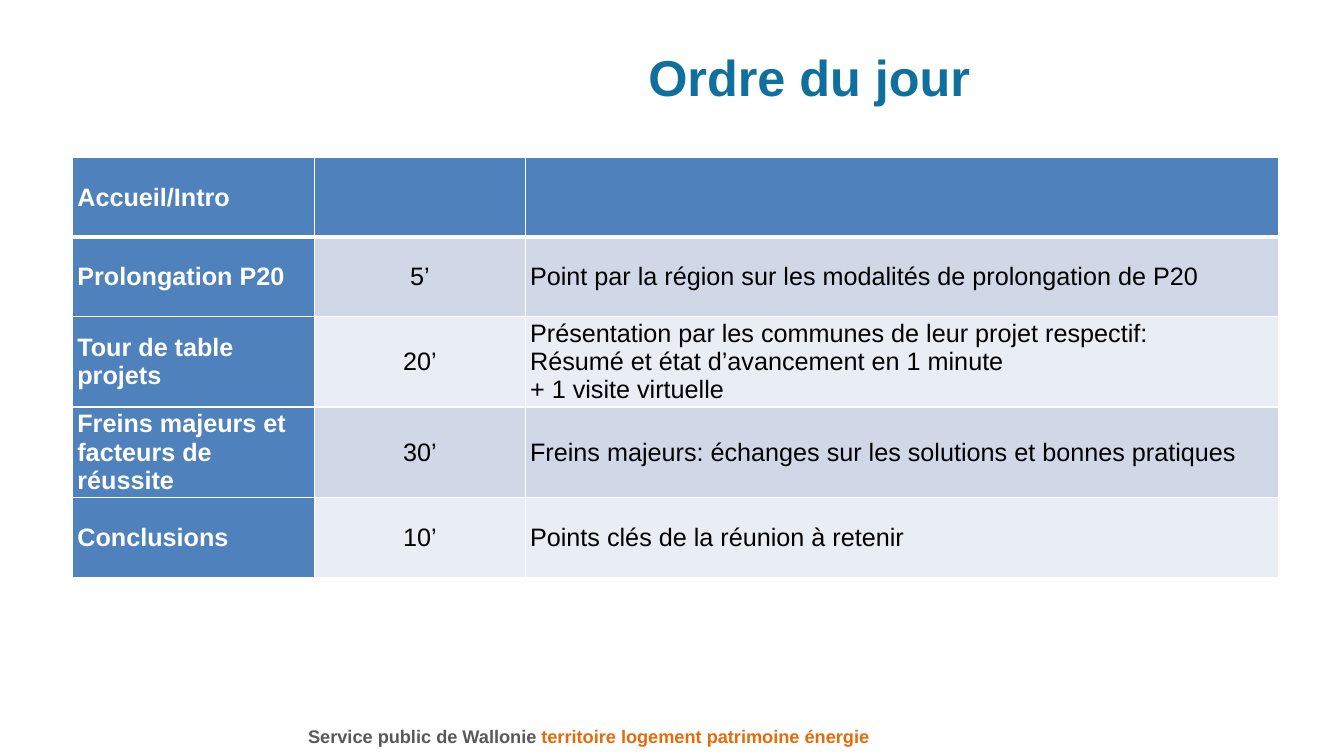
"""Builds the agenda slide of the meeting."""
from dataclasses import dataclass

from lxml.etree import SubElement
from pptx import Presentation
from pptx.dml.color import RGBColor
from pptx.enum.text import MSO_ANCHOR as Anchor, PP_ALIGN as Align
from pptx.oxml.ns import qn
from pptx.util import Cm, Pt


@dataclass(frozen=True)
class Theme:
    """Colours and type sizes of the slide."""
    font: str = "Arial"
    title: str = "0F709E"
    label: str = "FFFFFF"
    body: str = "000000"
    border: str = "FFFFFF"
    header: str = "4F81BD"
    bands: tuple = ("D0D8E8", "E9EDF4")
    service: str = "595959"
    department: str = "E46C0A"
    title_size: int = 36
    table_size: int = 18
    footer_size: int = 13


AGENDA = [
    ("Accueil/Intro", "", ""),
    ("Prolongation P20", "5’", "Point par la région sur les modalités de prolongation de P20"),
    ("Tour de table projets", "20’",
     "Présentation par les communes de leur projet respectif:\n"
     "Résumé et état d’avancement en 1 minute\n+ 1 visite virtuelle"),
    ("Freins majeurs et facteurs de réussite", "30’",
     "Freins majeurs: échanges sur les solutions et bonnes pratiques"),
    ("Conclusions", "10’", "Points clés de la réunion à retenir"),
]
COLUMN_WIDTHS = (6.1, 5.31, 18.98)
ROW_HEIGHT = 2.0


def write(paragraph, text, *, font, size, color, bold=False, align=Align.LEFT):
    """Add a formatted run to a paragraph."""
    paragraph.alignment = align
    run = paragraph.add_run()
    run.text = text
    run.font.name = font
    run.font.size = Pt(size)
    run.font.bold = bold
    run.font.color.rgb = RGBColor.from_string(color)


class AgendaSlide:
    """Holds the theme and the slide being built."""

    def __init__(self, slide, theme):
        """Keep the slide and its theme."""
        self.slide = slide
        self.theme = theme

    def title(self, text, left, top, width, height):
        """Place and format the title placeholder."""
        shape = self.slide.shapes.title
        shape.left, shape.top, shape.width, shape.height = map(Cm, (left, top, width, height))
        shape.text_frame.vertical_anchor = Anchor.MIDDLE
        write(shape.text_frame.paragraphs[0], text, font=self.theme.font,
              size=self.theme.title_size, color=self.theme.title, bold=True, align=Align.CENTER)

    def footer(self, parts, left, top, width, height):
        """Add a right-aligned line of coloured parts."""
        shape = self.slide.shapes.add_textbox(*map(Cm, (left, top, width, height)))
        shape.text_frame.word_wrap = True
        for text, color in parts:
            write(shape.text_frame.paragraphs[0], text, font=self.theme.font,
                  size=self.theme.footer_size, color=color, bold=True, align=Align.RIGHT)

    def table(self, rows, left, top):
        """Add the agenda table."""
        frame = self.slide.shapes.add_table(
            len(rows), len(COLUMN_WIDTHS), Cm(left), Cm(top),
            Cm(sum(COLUMN_WIDTHS)), Cm(ROW_HEIGHT * len(rows)))
        table = frame.table
        for column, width in zip(table.columns, COLUMN_WIDTHS):
            column.width = Cm(width)
        for row_index, texts in enumerate(rows):
            table.rows[row_index].height = Cm(ROW_HEIGHT)
            for column_index, text in enumerate(texts):
                self.cell(table.cell(row_index, column_index), text, row_index, column_index)

    def cell(self, cell, text, row_index, column_index):
        """Fill, frame and write one table cell."""
        theme = self.theme
        is_label = row_index == 0 or column_index == 0
        self.borders(cell, top=3 if row_index == 1 else 1, bottom=3 if row_index == 0 else 1)
        cell.fill.solid()
        fill = theme.header if is_label else theme.bands[(row_index - 1) % 2]
        cell.fill.fore_color.rgb = RGBColor.from_string(fill)
        cell.vertical_anchor = Anchor.MIDDLE
        cell.margin_left = cell.margin_right = Cm(0.12)
        cell.margin_top = cell.margin_bottom = 0
        if not text:
            return
        for line_index, line in enumerate(text.split("\n")):
            frame = cell.text_frame
            paragraph = frame.add_paragraph() if line_index else frame.paragraphs[0]
            write(paragraph, line, font=theme.font, size=theme.table_size,
                  color=theme.label if is_label else theme.body, bold=is_label,
                  align=Align.CENTER if column_index == 1 else Align.LEFT)

    def borders(self, cell, top, bottom):
        """Draw the four borders of a cell, with widths in points."""
        properties = cell._tc.get_or_add_tcPr()
        for side, width in (("L", 1), ("R", 1), ("T", top), ("B", bottom)):
            line = SubElement(properties, qn(f"a:ln{side}"), w=str(Pt(width)))
            fill = SubElement(line, qn("a:solidFill"))
            SubElement(fill, qn("a:srgbClr"), val=self.theme.border)


def main():
    """Build and save the presentation."""
    presentation = Presentation()
    presentation.slide_width, presentation.slide_height = Cm(33.87), Cm(19.05)
    theme = Theme()
    slide = presentation.slides.add_slide(presentation.slide_layouts.get_by_name("Title Only"))
    agenda = AgendaSlide(slide, theme)
    agenda.footer([("Service public de Wallonie ", theme.service),
                   ("territoire logement patrimoine énergie", theme.department)],
                  6.53, 18.14, 15.62, 0.81)
    agenda.table(AGENDA, 1.83, 3.97)
    agenda.title("Ordre du jour", 6.93, 0.33, 26.93, 3.18)
    presentation.save("out.pptx")


if __name__ == "__main__":
    main()
